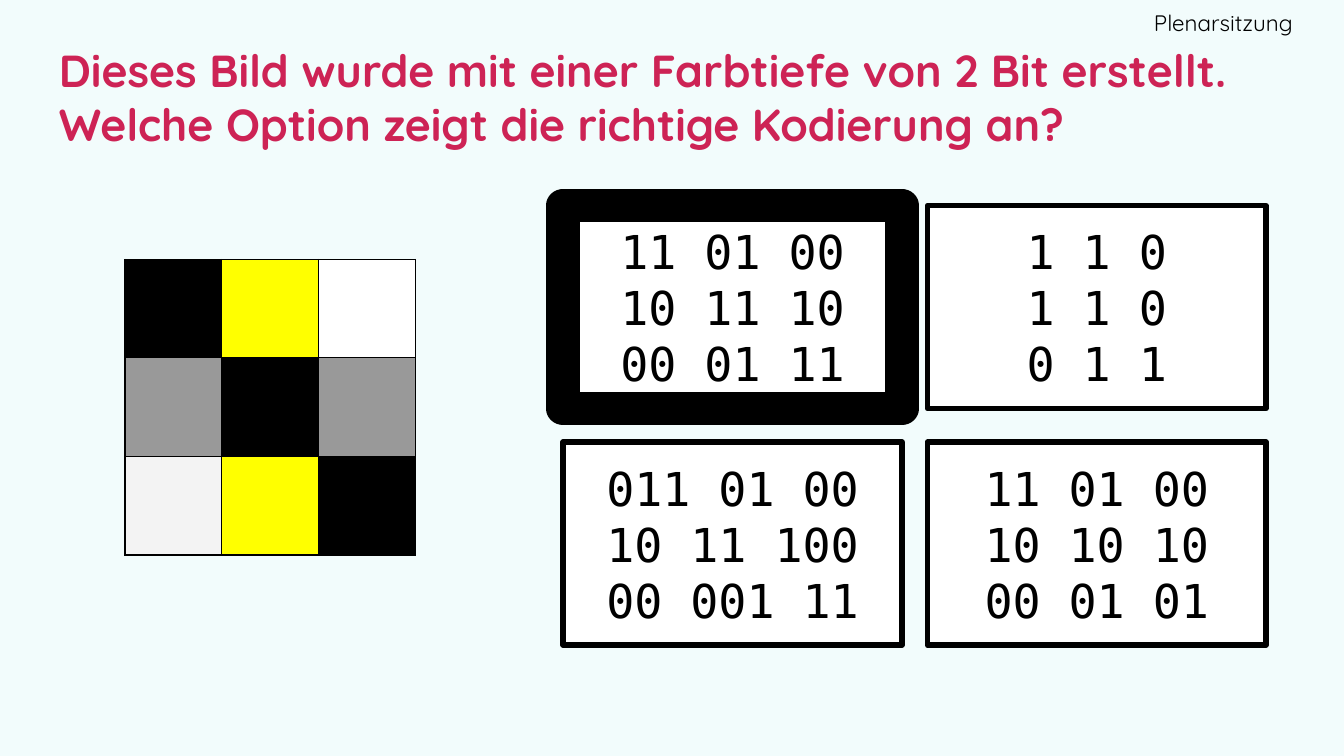
from lxml import etree
from pptx import Presentation
from pptx.dml.color import RGBColor
from pptx.enum.shapes import MSO_SHAPE as Shape
from pptx.enum.text import MSO_ANCHOR as Anchor, PP_ALIGN as Align
from pptx.oxml.ns import qn
from pptx.util import Inches, Pt

COLORS = {
    "background": "F2FCFC", "title": "CD2355", "black": "000000",
    "white": "FFFFFF", "yellow": "FFFF00", "gray": "999999", "light": "F3F3F3",
}
TITLE = ("Dieses Bild wurde mit einer Farbtiefe von 2 Bit erstellt. "
         "Welche Option zeigt die richtige Kodierung an?")
LABEL = "Plenarsitzung"
PIXELS = [
    ["black", "yellow", "white"],
    ["gray", "black", "gray"],
    ["light", "yellow", "black"],
]
OPTIONS = [
    ["11 01 00", "10 11 10", "00 01 11"],
    ["1 1 0", "1 1 0", "0 1 1"],
    ["011 01 00", "10 11 100", "00 001 11"],
    ["11 01 00", "10 10 10", "00 01 01"],
]
CORRECT = 0
OPTION_LEFT, OPTION_TOP = 4.19, 1.53
OPTION_WIDTH, OPTION_HEIGHT = 2.52, 1.51
STEP_X, STEP_Y = 2.71, 1.76
GRID_PLACE = (0.93, 1.93, 2.16, 2.2)


def color(name):
    return RGBColor.from_string(COLORS[name])


def paint(target, name):
    target.fill.solid()
    target.fill.fore_color.rgb = color(name)


def write(box, lines, font, size, ink, align, margins, bold=False):
    frame = box.text_frame
    frame.word_wrap = True
    frame.vertical_anchor = Anchor.MIDDLE
    (frame.margin_left, frame.margin_top,
     frame.margin_right, frame.margin_bottom) = map(Inches, margins)
    frame.text = "\n".join(lines)
    for para in frame.paragraphs:
        para.alignment = align
        para.font.name = font
        para.font.size = Pt(size)
        para.font.bold = bold
        para.font.color.rgb = color(ink)


def add_text(page, place, *style, **extra):
    box = page.shapes.add_textbox(*map(Inches, place))
    write(box, *style, **extra)


def add_option(page, index, lines):
    row, column = divmod(index, 2)
    place = (OPTION_LEFT + column * STEP_X, OPTION_TOP + row * STEP_Y,
             OPTION_WIDTH, OPTION_HEIGHT)
    box = page.shapes.add_shape(Shape.RECTANGLE, *map(Inches, place))
    box.shadow.inherit = False
    paint(box, "white")
    box.line.color.rgb = color("black")
    box.line.width = Pt(18 if index == CORRECT else 3)
    etree.SubElement(box.line._get_or_add_ln(), qn("a:round"))
    write(box, lines, "DejaVu Sans Mono", 25, "black", Align.CENTER, [0.05] * 4)


def add_border(cell):
    properties = cell._tc.get_or_add_tcPr()
    for position, side in enumerate(("a:lnL", "a:lnR", "a:lnT", "a:lnB")):
        line = etree.Element(qn(side), w=str(Pt(0.75)))
        fill = etree.SubElement(line, qn("a:solidFill"))
        etree.SubElement(fill, qn("a:srgbClr"), val=COLORS["black"])
        properties.insert(position, line)


def add_pixels(page):
    rows, columns = len(PIXELS), len(PIXELS[0])
    frame = page.shapes.add_table(rows, columns, *map(Inches, GRID_PLACE))
    for row, names in zip(frame.table.rows, PIXELS):
        for cell, name in zip(row.cells, names):
            paint(cell, name)
            add_border(cell)


def main():
    deck = Presentation()
    deck.slide_width = Inches(10)
    deck.slide_height = deck.slide_width * 9 // 16
    page = deck.slides.add_slide(deck.slide_layouts[6])
    paint(page.background, "background")
    add_text(page, (0.34, 0.34, 9.32, 0.76), [TITLE], "Quicksand", 24,
             "title", Align.LEFT, [0.1] * 4, bold=True)
    for index, lines in enumerate(OPTIONS):
        add_option(page, index, lines)
    add_pixels(page)
    add_text(page, (7.48, 0, 2.14, 0.34), [LABEL], "Quicksand", 12,
             "black", Align.RIGHT, [0.1, 0.1, 0, 0.1])
    deck.save("out.pptx")


if __name__ == "__main__":
    main()
